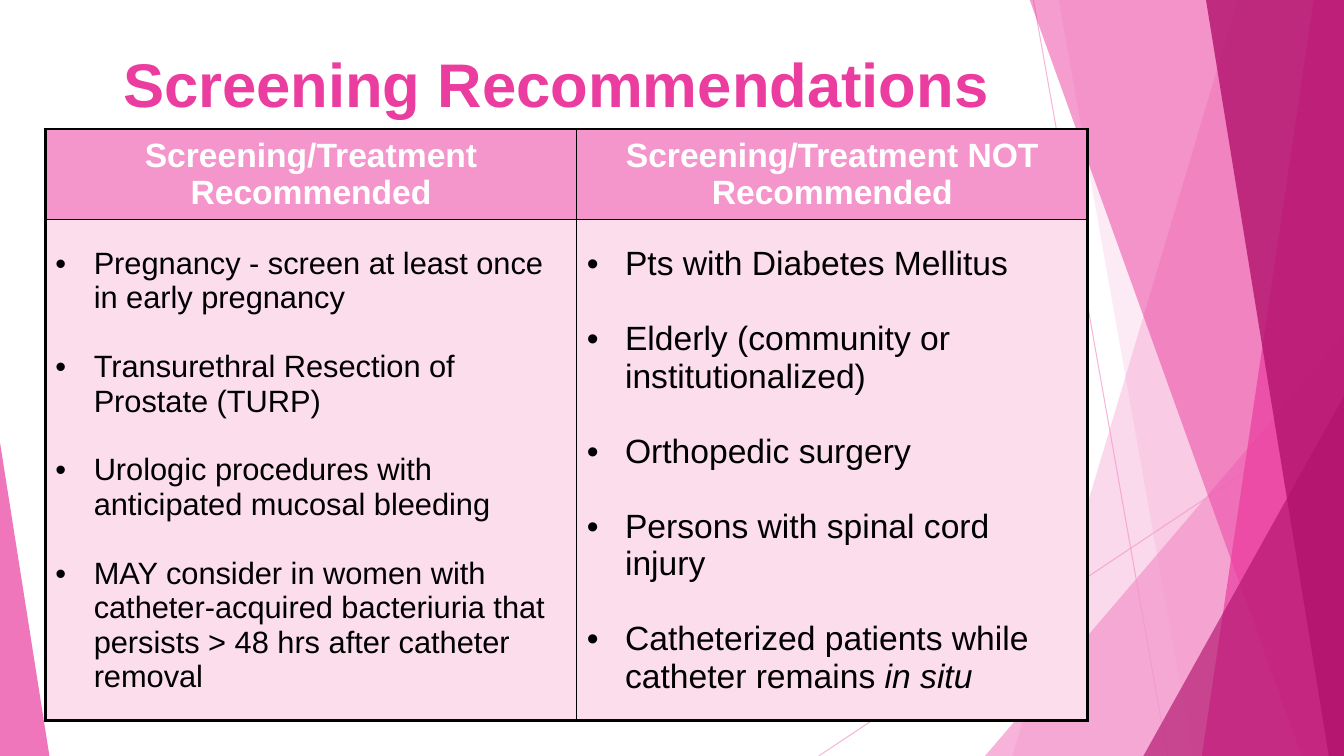
from lxml import etree
from pptx import Presentation
from pptx.dml.color import RGBColor
from pptx.enum.shapes import MSO_CONNECTOR as CONN, MSO_SHAPE as SHAPE
from pptx.enum.text import MSO_ANCHOR as ANCHOR, PP_ALIGN as ALIGN
from pptx.oxml.ns import qn
from pptx.util import Inches, Pt

PINK, ROSE, PLUM, BLUSH = "F496CB", "EB3D9F", "B2136D", "FBDDEC"
WHITE, BLACK = "FFFFFF", "000000"
W, H = 13.33, 7.5
LINE_HEIGHT = 1.117

HEADERS = ["Screening/Treatment Recommended", "Screening/Treatment NOT Recommended"]
RECOMMENDED = [
    ["Pregnancy - screen at least once in early pregnancy"],
    ["Transurethral Resection of Prostate (TURP)"],
    ["Urologic procedures with anticipated mucosal bleeding"],
    ["MAY consider in women with catheter-acquired bacteriuria that "
     "persists > 48 hrs after catheter removal"],
]
NOT_RECOMMENDED = [
    ["Pts with Diabetes Mellitus"],
    ["Elderly (community or institutionalized)"],
    ["Orthopedic surgery"],
    ["Persons with spinal cord injury"],
    ["Catheterized patients while catheter remains ", "in situ"],
]


def rgb(color):
    return RGBColor.from_string(color)


def set_alpha(fill, percent):
    clr = fill._xPr.find(qn("a:solidFill"))[0]
    etree.SubElement(clr, qn("a:alpha")).set("val", str(percent * 1000))


def style_shape(sp, color, alpha):
    sp.shadow.inherit = False
    sp.fill.solid()
    sp.fill.fore_color.rgb = rgb(color)
    set_alpha(sp.fill, alpha)
    sp.line.fill.background()


def style_run(r, size, color, bold=False):
    r.font.name = "Arial"
    r.font.size = Pt(size)
    r.font.bold = bold
    r.font.color.rgb = rgb(color)


def add_ray(s, x1, y1, x2, y2):
    line = s.shapes.add_connector(
        CONN.STRAIGHT, Inches(x1), Inches(y1), Inches(x2), Inches(y2))
    line.line.color.rgb = rgb(PINK)
    line.line.width = Pt(0.75)
    set_alpha(line.line.fill, 70)
    etree.SubElement(line._element.spPr, qn("a:effectLst"))


def add_band(s, top_x, bottom_x, right, bottom, color, alpha):
    top = -0.01
    fb = s.shapes.build_freeform(Inches(top_x), Inches(top))
    corners = [(right, top), (right, bottom), (bottom_x, bottom)]
    fb.add_line_segments([(Inches(x), Inches(y)) for x, y in corners], close=True)
    style_shape(fb.convert_to_shape(), color, alpha)


def add_wedge(s, x, y, w, h, apex, color, alpha):
    sp = s.shapes.add_shape(
        SHAPE.ISOSCELES_TRIANGLE, Inches(x), Inches(y), Inches(w), Inches(h))
    sp.adjustments[0] = apex
    style_shape(sp, color, alpha)


def add_backdrop(s, w, h):
    add_ray(s, 10.25, 0, 11.58, h)
    add_ray(s, w, 4.03, 8.12, h)
    add_band(s, 12.28, 10.04, w, h, PINK, 36)
    add_band(s, 10.5, 11.83, w, h, PINK, 20)
    add_wedge(s, w - 3.56, h - 4.17, 3.56, 4.17, 1, PINK, 72)
    add_band(s, 10.21, 12.91, w, h, ROSE, 50)
    add_band(s, 13.03, 11.92, w, h, ROSE, 70)
    add_band(s, 11.96, 13.18, w, h, PLUM, 80)
    add_wedge(s, w - 1.99, h - 3.57, 1.99, 3.57, 1, PLUM, 66)
    add_wedge(s, 0, h - 3.11, 0.49, 3.11, 0, ROSE, 70)


def add_title(s, x, y, w, h):
    tf = s.shapes.add_textbox(Inches(x), Inches(y), Inches(w), Inches(h)).text_frame
    tf.word_wrap = True
    tf.vertical_anchor = ANCHOR.MIDDLE
    tf.margin_bottom = Inches(0.13)
    p = tf.paragraphs[0]
    p.text = "Screening Recommendations"
    p.alignment = ALIGN.CENTER
    style_run(p.runs[0], 44, ROSE, True)


def set_borders(cell, row, col):
    outer = {"lnL": col == 0, "lnR": col == 1, "lnT": row == 0, "lnB": row == 1}
    tcPr = cell._tc.get_or_add_tcPr()
    for i, (tag, is_outer) in enumerate(outer.items()):
        ln = etree.Element(qn(f"a:{tag}"), w=str(Pt(2.25 if is_outer else 1)))
        fill = etree.SubElement(ln, qn("a:solidFill"))
        etree.SubElement(fill, qn("a:srgbClr"), val=BLACK)
        tcPr.insert(i, ln)


def style_cell(cell, row, col, color):
    cell.vertical_anchor = ANCHOR.MIDDLE
    cell.fill.solid()
    cell.fill.fore_color.rgb = rgb(color)
    set_borders(cell, row, col)


def fill_header(cell, text):
    p = cell.text_frame.paragraphs[0]
    p.text = text
    p.alignment = ALIGN.CENTER
    style_run(p.runs[0], 24, WHITE, True)


def fill_bullets(cell, items, size):
    tf = cell.text_frame
    for i, parts in enumerate(items):
        p = tf.add_paragraph() if i else tf.paragraphs[0]
        if i:
            p.space_before = Pt(round(size * LINE_HEIGHT, 1))
        pPr = p._p.get_or_add_pPr()
        pPr.set("marL", str(Inches(0.38)))
        pPr.set("indent", str(-Inches(0.38)))
        etree.SubElement(pPr, qn("a:buFont"), typeface="Arial")
        etree.SubElement(pPr, qn("a:buChar"), char="•")
        for j, text in enumerate(parts):
            r = p.add_run()
            r.text = text
            style_run(r, size, BLACK)
            r.font.italic = j > 0


def add_screening_table(s, x, y, col_widths, row_heights):
    tbl = s.shapes.add_table(
        2, 2, Inches(x), Inches(y),
        Inches(sum(col_widths)), Inches(sum(row_heights))).table
    for row, height in enumerate(row_heights):
        tbl.rows[row].height = Inches(height)
    columns = zip(col_widths, HEADERS, (RECOMMENDED, NOT_RECOMMENDED), (22, 24))
    for col, (width, header, items, size) in enumerate(columns):
        tbl.columns[col].width = Inches(width)
        fill_header(tbl.cell(0, col), header)
        fill_bullets(tbl.cell(1, col), items, size)
        for row, color in enumerate((PINK, BLUSH)):
            style_cell(tbl.cell(row, col), row, col, color)


def main():
    prs = Presentation()
    prs.slide_width, prs.slide_height = Inches(W), Inches(H)
    s = prs.slides.add_slide(prs.slide_layouts[6])
    add_backdrop(s, W, H)
    add_title(s, 0.45, 0.36, 10.14, 1)
    add_screening_table(s, 0.45, 1.28, (5.27, 5.07), (0.84, 4.97))
    prs.save("out.pptx")


if __name__ == "__main__":
    main()
